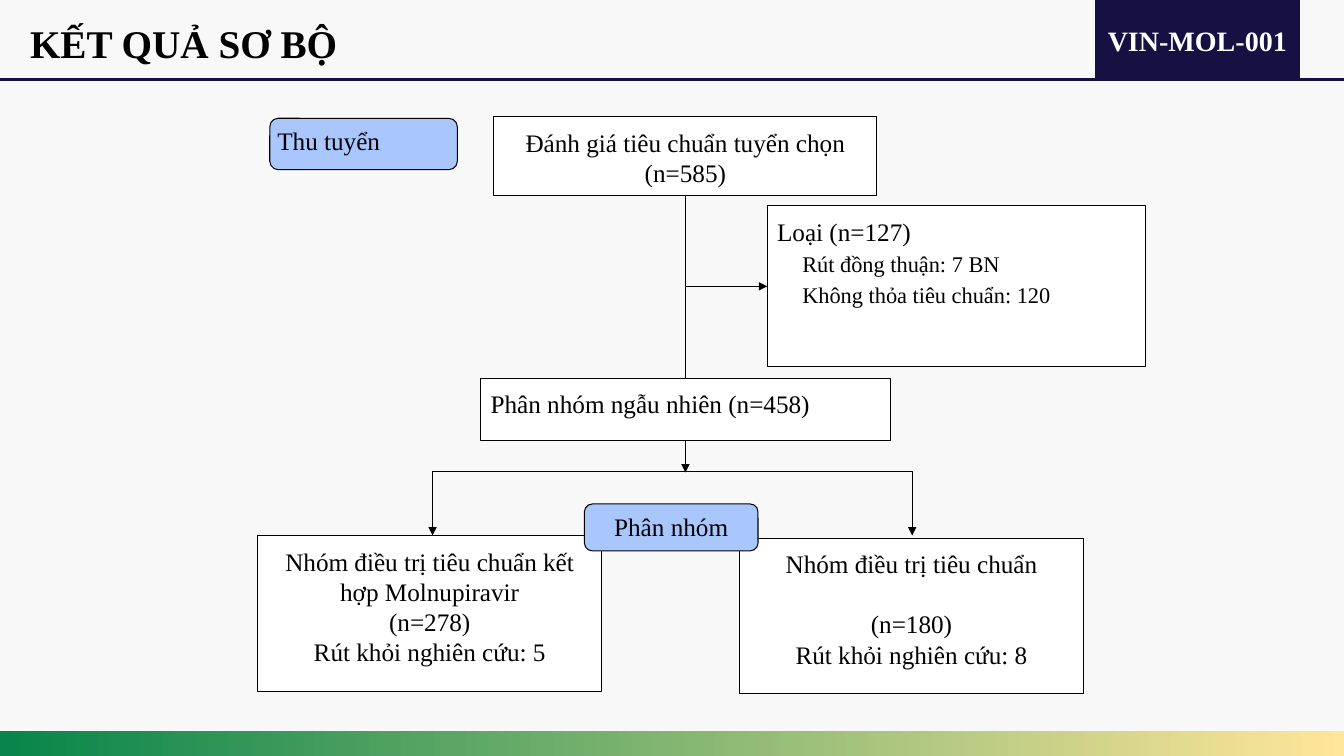
import pptx
import pptx.util
import pptx.dml.color
import pptx.enum.shapes
import pptx.enum.text
import pptx.oxml.ns
import lxml.etree

Pt = pptx.util.Pt
RGB = pptx.dml.color.RGBColor.from_string
SHAPE = pptx.enum.shapes.MSO_SHAPE
LINK = pptx.enum.shapes.MSO_CONNECTOR
ALIGN = pptx.enum.text.PP_ALIGN
ANCHOR = pptx.enum.text.MSO_ANCHOR
qn = pptx.oxml.ns.qn

THEME = {
    "font": "Times New Roman",
    "title": 28, "code": 20, "body": 18, "detail": 16,
    "ink": "000000", "paper": "FFFFFF", "veil": "F2F2F2",
    "navy": "171043", "pill": "A9C7FD",
    "footer": ("FFE699", "07854A"),
}


def add_box(kind, place, fill=None, line=None, width=0.75, paras=(), inset=7.2,
            align=ALIGN.CENTER, anchor=ANCHOR.TOP):
    """Add a shape; each paragraph is (text, size, extra formatting)."""
    sp = s.shapes.add_shape(kind, *[Pt(v) for v in place])
    sp.shadow.inherit = False
    if fill:
        sp.fill.solid()
        sp.fill.fore_color.rgb = RGB(fill)
    if line:
        sp.line.color.rgb = RGB(line)
        sp.line.width = Pt(width)
    else:
        sp.line.fill.background()
    tf = sp.text_frame
    tf.word_wrap = True
    tf.vertical_anchor = anchor
    tf.margin_left = tf.margin_right = tf.margin_top = tf.margin_bottom = Pt(inset)
    for i, (text, size, extra) in enumerate(paras):
        p = tf.paragraphs[0] if i == 0 else tf.add_paragraph()
        p.alignment = extra.get("align", align)
        p.line_spacing = extra.get("spacing")
        p.space_before = Pt(extra.get("before", 0))
        if "indent" in extra:
            p._p.get_or_add_pPr().set("marL", str(Pt(extra["indent"])))
        r = p.add_run()
        r.text = text
        r.font.name = THEME["font"]
        r.font.size = Pt(THEME[size])
        r.font.bold = extra.get("bold", False)
        r.font.color.rgb = RGB(extra.get("color", THEME["ink"]))
    return sp


def add_line(start, end, kind=LINK.STRAIGHT, color=THEME["ink"], width=0.75, arrow=True):
    cx = s.shapes.add_connector(kind, *[Pt(v) for v in start + end])
    cx.line.color.rgb = RGB(color)
    cx.line.width = Pt(width)
    if arrow:
        lxml.etree.SubElement(cx.line._get_or_add_ln(), qn("a:tailEnd"), type="triangle")
    lxml.etree.SubElement(cx._element.spPr, qn("a:effectLst"))
    return cx


prs = pptx.Presentation()
prs.slide_width, prs.slide_height = Pt(960), Pt(540)
s = prs.slides.add_slide(prs.slide_layouts[6])

# Background veil and footer band
veil = add_box(SHAPE.RECTANGLE, (0, 0, 960, 531.5), THEME["veil"])
veil_color = veil._element.spPr.find(qn("a:solidFill"))[0]
lxml.etree.SubElement(veil_color, qn("a:alpha"), val="49000")
footer = add_box(SHAPE.RECTANGLE, (0, 522, 960, 18))
footer.fill.gradient()
footer.fill.gradient_angle = 180
for stop, color in zip(footer.fill.gradient_stops, THEME["footer"]):
    stop.color.rgb = RGB(color)

# Header
add_box(SHAPE.RECTANGLE, (782.5, 0, 145.5, 57), THEME["navy"], THEME["navy"], 1,
        [("VIN-MOL-001", "code", {"bold": True, "color": THEME["paper"]})],
        anchor=ANCHOR.MIDDLE)
add_line((0, 57), (960, 57), color=THEME["navy"], width=2, arrow=False)
tb = s.shapes.add_textbox(Pt(14.4), Pt(10), Pt(526), Pt(41))
tb.text_frame.word_wrap = True
r = tb.text_frame.paragraphs[0].add_run()
r.text = "KẾT QUẢ SƠ BỘ"
r.font.name = THEME["font"]
r.font.size = Pt(THEME["title"])
r.font.bold = True
r.font.color.rgb = RGB(THEME["ink"])

# Flow boxes
boxed = {"fill": THEME["paper"], "line": THEME["ink"]}
pill = {"fill": THEME["pill"], "line": THEME["ink"], "inset": 3.6}
detail = {"indent": 18, "spacing": 1.15, "align": ALIGN.LEFT}

screened = add_box(SHAPE.RECTANGLE, (352.8, 83.5, 273.6, 56), **boxed, paras=[
    ("Đánh giá tiêu chuẩn tuyển chọn (n=585)", "body", {})])
excluded = add_box(SHAPE.RECTANGLE, (548, 147, 270.5, 115), **boxed, paras=[
    ("Loại (n=127)", "body", {"align": ALIGN.JUSTIFY}),
    ("Rút đồng thuận: 7 BN", "detail", detail),
    ("Không thỏa tiêu chuẩn: 120", "detail", detail)])
add_box(SHAPE.RECTANGLE, (184, 382.7, 246, 111), **boxed, paras=[
    ("Nhóm điều trị tiêu chuẩn kết hợp Molnupiravir", "body", {}),
    ("(n=278)", "body", {}),
    ("Rút khỏi nghiên cứu: 5", "body", {})])
add_box(SHAPE.RECTANGLE, (528.2, 384.5, 245.8, 111), **boxed, paras=[
    ("Nhóm điều trị tiêu chuẩn", "body", {}),
    ("(n=180)", "body", {"before": 21.5}),
    ("Rút khỏi nghiên cứu: 8", "body", {})])

# Stage labels
add_box(SHAPE.ROUNDED_RECTANGLE, (417.5, 360, 124, 33.5), **pill,
        paras=[("Phân nhóm", "body", {})])
add_box(SHAPE.ROUNDED_RECTANGLE, (192.7, 84.5, 134, 36.7), **pill,
        paras=[("Thu tuyển", "body", {})], align=ALIGN.JUSTIFY)

# Arrows to the two arms
for start_x, end_x in ((510.5, 309), (450, 651.6)):
    arm = add_line((start_x, 337), (end_x, 382.5), LINK.ELBOW)
    arm._element.spPr.find(qn("a:prstGeom")).set("prst", "bentConnector2")

# Trunk and the branch to the excluded patients
trunk_x = 489.6
trunk = add_line((trunk_x, 139.5), (trunk_x, 337.5))
trunk.begin_connect(screened, 2)
branch = add_line((trunk_x, 204.5), (548, 204.5))
branch.end_connect(excluded, 1)

# Randomised box lies over the trunk
add_box(SHAPE.RECTANGLE, (343.4, 270.5, 293, 44.5), **boxed, align=ALIGN.JUSTIFY,
        paras=[("Phân nhóm ngẫu nhiên (n=458)", "body", {})])

prs.save("out.pptx")
